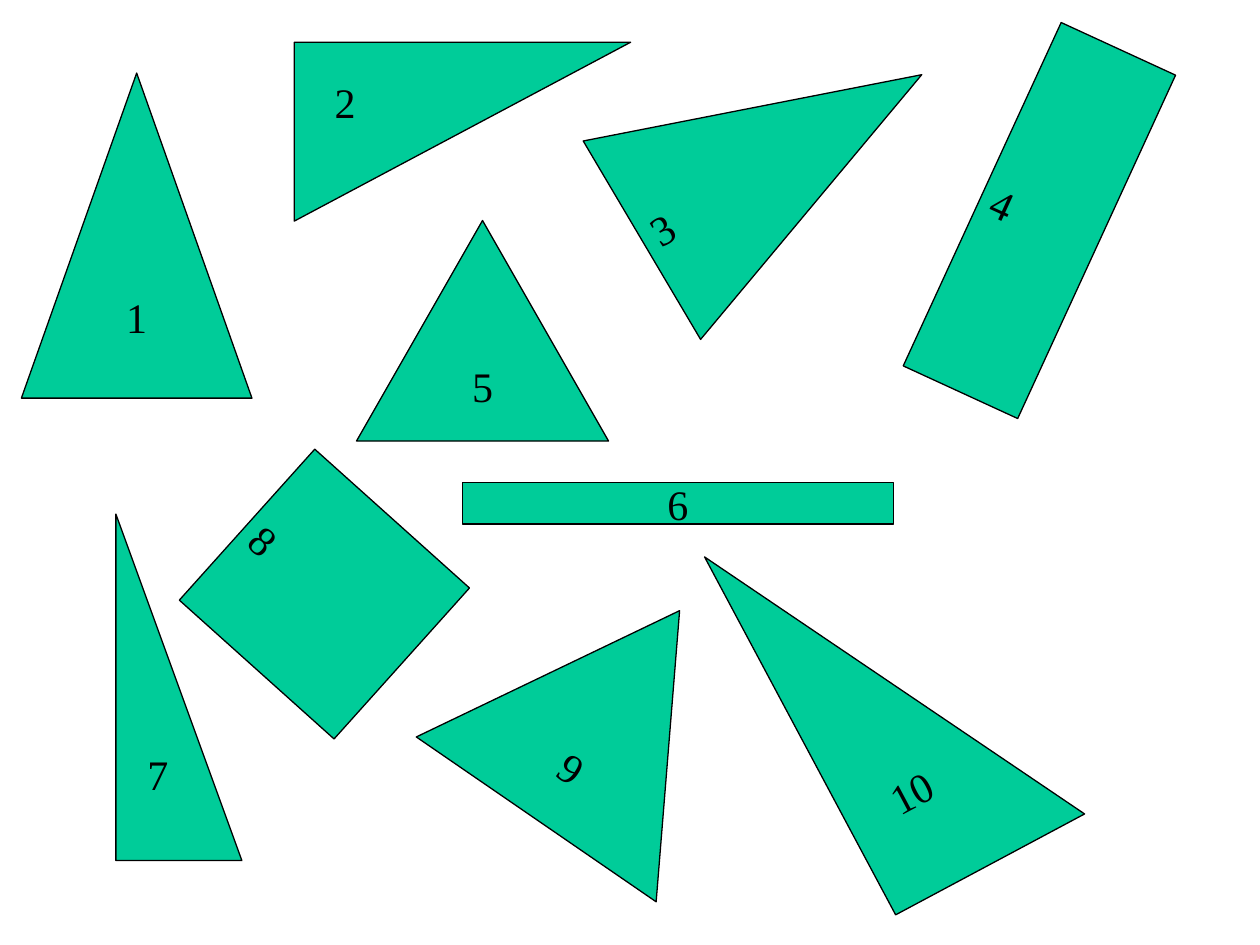
from dataclasses import dataclass

from pptx import Presentation
from pptx.dml.color import RGBColor
from pptx.enum import shapes, text
from pptx.util import Inches, Pt


@dataclass(frozen=True)
class Theme:
    fill: RGBColor = RGBColor(0x00, 0xCC, 0x99)
    ink: RGBColor = RGBColor(0x00, 0x00, 0x00)
    outline: float = 0.75
    font: str = "Times New Roman"
    label_size: int = 24


@dataclass(frozen=True)
class Figure:
    label: str
    kind: shapes.MSO_SHAPE
    left: float
    top: float
    width: float
    height: float
    rotation: float = 0
    vertical: bool = False
    text_turn: int = 0


THEME = Theme()
ISOSCELES = shapes.MSO_SHAPE.ISOSCELES_TRIANGLE
RIGHT = shapes.MSO_SHAPE.RIGHT_TRIANGLE
RECTANGLE = shapes.MSO_SHAPE.RECTANGLE

FIGURES = [
    Figure("1", ISOSCELES, 0.17, 0.58, 1.83, 2.58),
    Figure("7", RIGHT, 0.92, 4.08, 1, 2.75),
    Figure("10", RIGHT, 6.25, 3.83, 1.7, 3.22, rotation=331.9),
    Figure("2", RIGHT, 2.96, -0.29, 1.42, 2.67, rotation=90, vertical=True, text_turn=180),
    Figure("4", RECTANGLE, 6.75, 1.25, 3, 1, rotation=294.7, vertical=True),
    Figure("3", ISOSCELES, 5.29, -0.04, 1.83, 2.58, rotation=59.4, vertical=True, text_turn=180),
    Figure("5", ISOSCELES, 2.83, 1.75, 2, 1.75),
    Figure("8", RECTANGLE, 1.77, 3.89, 1.61, 1.65, rotation=311.9, vertical=True),
    Figure("9", ISOSCELES, 3.67, 4.67, 2.31, 2.01, rotation=34.5),
    Figure("6", RECTANGLE, 3.67, 3.83, 3.42, 0.33),
]


def write_label(frame, label: str, *, vertical: bool = False, turn: int = 0) -> None:
    """Centre the label; vertical and turn (degrees) set its direction in the shape."""
    frame.word_wrap = False
    frame.vertical_anchor = text.MSO_ANCHOR.MIDDLE
    body = frame._txBody.bodyPr
    if vertical:
        body.set("vert", "eaVert")
    if turn:
        body.set("rot", str(turn * 60000))
    paragraph = frame.paragraphs[0]
    paragraph.alignment = text.PP_ALIGN.CENTER
    run = paragraph.add_run()
    run.text = label
    run.font.name = THEME.font
    run.font.size = Pt(THEME.label_size)
    run.font.color.rgb = THEME.ink


def draw_figure(slide, figure: Figure) -> None:
    polygon = slide.shapes.add_shape(
        figure.kind,
        Inches(figure.left), Inches(figure.top),
        Inches(figure.width), Inches(figure.height),
    )
    polygon.rotation = figure.rotation
    polygon.shadow.inherit = False
    polygon.fill.solid()
    polygon.fill.fore_color.rgb = THEME.fill
    polygon.line.color.rgb = THEME.ink
    polygon.line.width = Pt(THEME.outline)
    write_label(polygon.text_frame, figure.label,
                vertical=figure.vertical, turn=figure.text_turn)


def main() -> None:
    deck = Presentation()
    deck.slide_width, deck.slide_height = Inches(10), Inches(7.5)
    slide = deck.slides.add_slide(deck.slide_layouts[6])
    for figure in FIGURES:
        draw_figure(slide, figure)
    deck.save("out.pptx")


if __name__ == "__main__":
    main()
